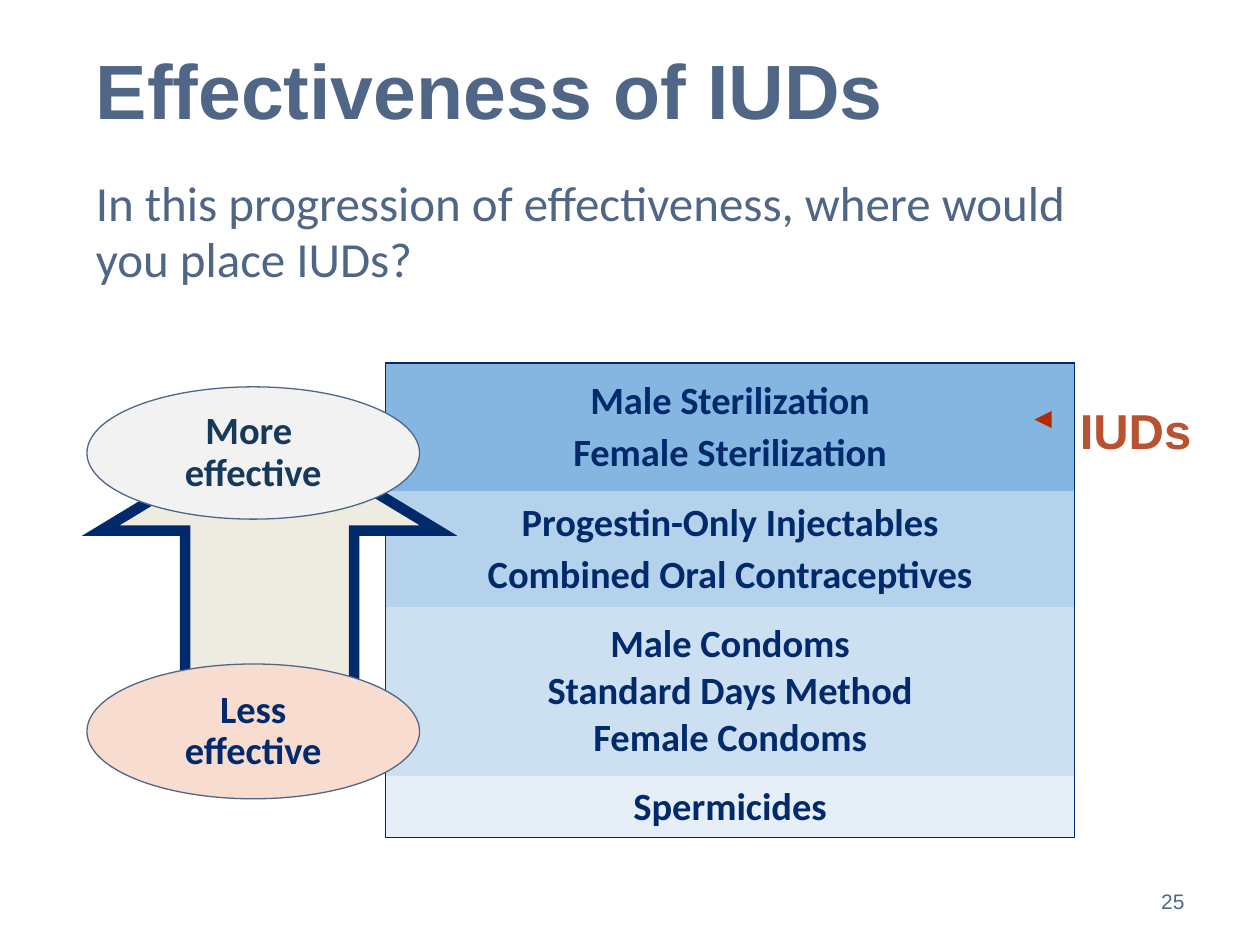
from dataclasses import dataclass

from lxml.etree import SubElement
from pptx import Presentation
from pptx.dml.color import RGBColor
from pptx.enum.shapes import MSO_CONNECTOR as Connector, MSO_SHAPE as Preset
from pptx.enum.text import MSO_ANCHOR as Anchor, MSO_AUTO_SIZE as AutoSize, PP_ALIGN as Align
from pptx.oxml import parse_xml
from pptx.oxml.ns import nsdecls, qn
from pptx.util import Inches, Pt

WHITE = RGBColor(0xFF, 0xFF, 0xFF)
SLATE = RGBColor(0x50, 0x66, 0x87)
NAVY = RGBColor(0x00, 0x2A, 0x6C)
DEEP_BLUE = RGBColor(0x15, 0x39, 0x5B)
RUST = RGBColor(0xB8, 0x52, 0x31)
RED = RGBColor(0xB4, 0x2B, 0x00)
CREAM = RGBColor(0xEE, 0xEC, 0xE1)
PALE_GREY = RGBColor(0xF2, 0xF2, 0xF2)
PEACH = RGBColor(0xF8, 0xDC, 0xD0)


@dataclass
class Tier:
    methods: list[str]
    height: float
    fill: RGBColor
    gap: float = 0


@dataclass
class Pole:
    lines: list[str]
    top: float
    height: float
    fill: RGBColor
    color: RGBColor


TIERS = [
    Tier(["Male Sterilization", "Female Sterilization"], 1.02, RGBColor(0x85, 0xB5, 0xE1), 3),
    Tier(["Progestin-Only Injectables", "Combined Oral Contraceptives"], 0.92,
         RGBColor(0xB5, 0xD2, 0xEC), 3),
    Tier(["Male Condoms", "Standard Days Method", "Female Condoms"], 1.34,
         RGBColor(0xCD, 0xE0, 0xF2)),
    Tier(["Spermicides"], 0.49, RGBColor(0xE6, 0xEF, 0xF8)),
]
POLES = [
    Pole(["More ", "effective"], 3.07, 1.05, PALE_GREY, DEEP_BLUE),
    Pole(["Less", "effective"], 5.27, 1.07, PEACH, NAVY),
]


def write(frame, lines: list[str], *, size: float, color: RGBColor, font: str = "Calibri",
          bold: bool = False, align=Align.LEFT, spacing: float = 1.0, gap: float = 0) -> None:
    for index, line in enumerate(lines):
        para = frame.paragraphs[0] if index == 0 else frame.add_paragraph()
        para.alignment = align
        para.line_spacing = spacing
        para.space_before = Pt(gap if index else 0)
        span = para.add_run()
        span.text = line
        span.font.name = font
        span.font.size = Pt(size)
        span.font.bold = bold
        span.font.color.rgb = color


def set_frame(frame, anchor=Anchor.TOP, side: float = 0.07, edge: float = 0.04) -> None:
    frame.word_wrap = True
    frame.auto_size = AutoSize.NONE
    frame.vertical_anchor = anchor
    frame.margin_left = frame.margin_right = Inches(side)
    frame.margin_top = frame.margin_bottom = Inches(edge)


def place(box, left: float, top: float, width: float, height: float) -> None:
    box.left, box.top = Inches(left), Inches(top)
    box.width, box.height = Inches(width), Inches(height)


def add_preset(group, preset, left: float, top: float, width: float, height: float,
               fill: RGBColor, line: RGBColor, weight: float):
    shape = group.shapes.add_shape(preset, Inches(left), Inches(top), Inches(width), Inches(height))
    shape.shadow.inherit = False
    shape.fill.solid()
    shape.fill.fore_color.rgb = fill
    shape.line.color.rgb = line
    shape.line.width = Pt(weight)
    return shape


def set_borders(cell, shown: str) -> None:
    properties = cell._tc.get_or_add_tcPr()
    for index, side in enumerate("LRTB"):
        paint = (f'<a:solidFill><a:srgbClr val="{NAVY}"/></a:solidFill>'
                 if side in shown else "<a:noFill/>")
        properties.insert(index, parse_xml(
            f'<a:ln{side} {nsdecls("a")} w="{Pt(1)}">{paint}</a:ln{side}>'))


def add_heading(page) -> None:
    title, body = page.shapes.title, page.placeholders[1]
    place(title, 0.69, 0.35, 9.33, 0.7)
    set_frame(title.text_frame)
    write(title.text_frame, ["Effectiveness of IUDs"], size=44, color=SLATE,
          font="Arial", bold=True, spacing=0.95)
    place(body, 0.69, 1.36, 8.47, 1.05)
    set_frame(body.text_frame)
    properties = body.text_frame.paragraphs[0]._p.get_or_add_pPr()
    properties.set("marL", "0")
    properties.set("indent", "0")
    SubElement(properties, qn("a:buNone"))
    write(body.text_frame,
          ["In this progression of effectiveness, where would you place IUDs?"],
          size=28, color=SLATE, spacing=0.95)


def add_tiers(page) -> None:
    height = sum(tier.height for tier in TIERS)
    table = page.shapes.add_table(len(TIERS), 1, Inches(3.06), Inches(2.88),
                                  Inches(5.47), Inches(height)).table
    table.first_row = table.horz_banding = False
    for index, tier in enumerate(TIERS):
        table.rows[index].height = Inches(tier.height)
        cell = table.cell(index, 0)
        cell.fill.solid()
        cell.fill.fore_color.rgb = tier.fill
        cell.vertical_anchor = Anchor.MIDDLE
        cell.margin_left = cell.margin_right = Inches(0.06)
        cell.margin_top = cell.margin_bottom = Inches(0.03)
        top = "T" if index == 0 else ""
        bottom = "B" if index == len(TIERS) - 1 else ""
        set_borders(cell, "LR" + top + bottom)
        write(cell.text_frame, tier.methods, size=22, color=NAVY, bold=True,
              align=Align.CENTER, gap=tier.gap)


def add_scale(page) -> None:
    group = page.shapes.add_group_shape()
    arrow = add_preset(group, Preset.UP_ARROW, 0.8, 3.4, 2.68, 2.18, CREAM, NAVY, 6)
    arrow.adjustments[0] = 0.5
    arrow.adjustments[1] = 0.372
    SubElement(arrow.line._get_or_add_ln(), qn("a:miter"), lim="800000")
    for pole in POLES:
        ellipse = add_preset(group, Preset.OVAL, 0.69, pole.top, 2.64, pole.height,
                             pole.fill, SLATE, 0.75)
        set_frame(ellipse.text_frame, Anchor.MIDDLE)
        write(ellipse.text_frame, pole.lines, size=22, color=pole.color, bold=True,
              align=Align.CENTER, spacing=0.9)


def add_answer(page) -> None:
    group = page.shapes.add_group_shape()
    label = group.shapes.add_textbox(Inches(8.5), Inches(3.14), Inches(1.37), Inches(0.64))
    set_frame(label.text_frame)
    write(label.text_frame, ["IUDs"], size=28, color=RUST, font="Arial", bold=True)
    pointer = group.shapes.add_connector(Connector.STRAIGHT, Inches(8.28), Inches(3.33),
                                         Inches(8.21), Inches(3.33))
    pointer.line.color.rgb = RED
    pointer.line.width = Pt(3.25)
    SubElement(pointer.line._get_or_add_ln(), qn("a:tailEnd"), type="triangle")
    SubElement(pointer._element.spPr, qn("a:effectLst"))


def add_page_number(page) -> None:
    number = page.shapes.add_textbox(Inches(7.17), Inches(6.95), Inches(2.33), Inches(0.4))
    set_frame(number.text_frame, Anchor.MIDDLE, 0.1, 0.05)
    write(number.text_frame, ["25"], size=12, color=SLATE, font="Arial", align=Align.RIGHT)


def main() -> None:
    deck = Presentation()
    deck.slide_width, deck.slide_height = Inches(10), Inches(7.5)
    page = deck.slides.add_slide(deck.slide_layouts[1])
    page.background.fill.solid()
    page.background.fill.fore_color.rgb = WHITE
    add_heading(page)
    add_tiers(page)
    add_scale(page)
    add_answer(page)
    add_page_number(page)
    deck.save("out.pptx")


if __name__ == "__main__":
    main()
